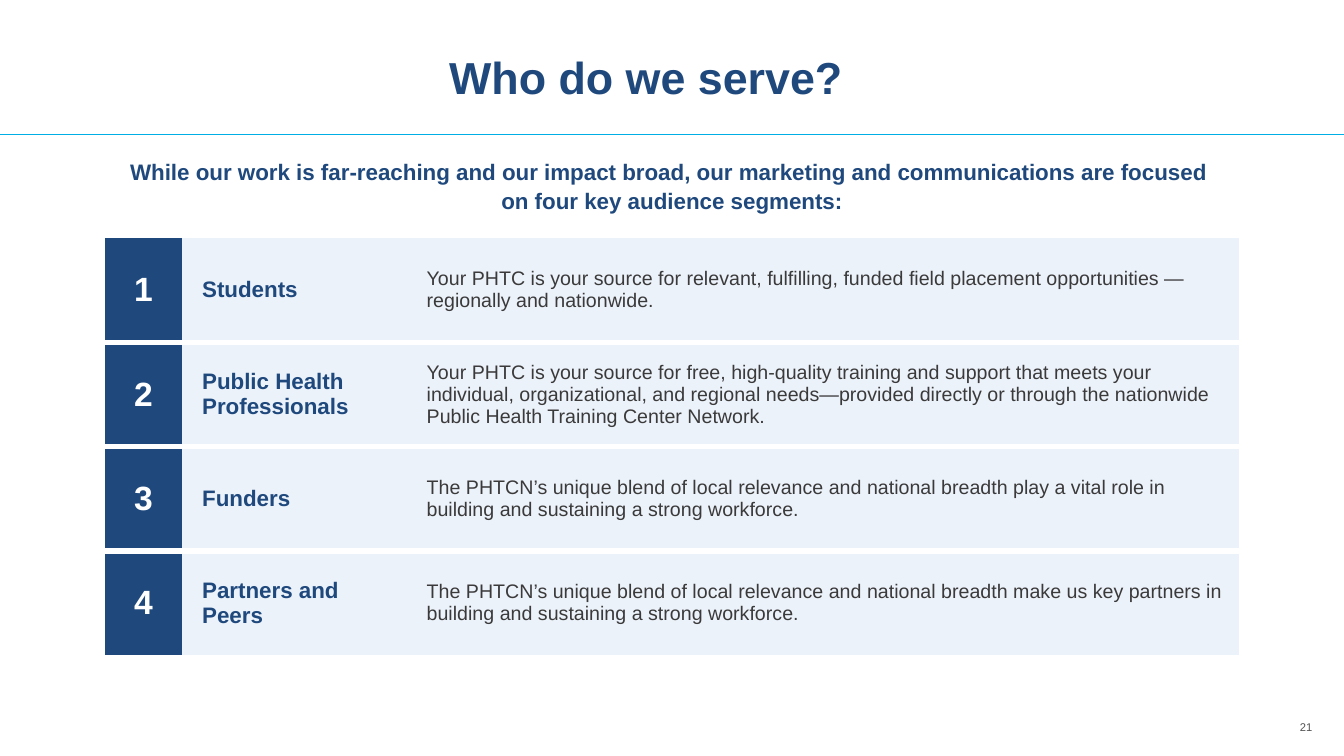
from lxml import etree
from pptx import Presentation
from pptx.dml.color import RGBColor
from pptx.enum.shapes import MSO_CONNECTOR
from pptx.enum.text import MSO_ANCHOR, PP_ALIGN
from pptx.oxml.ns import qn
from pptx.util import Pt

STRAIGHT = MSO_CONNECTOR.STRAIGHT
MIDDLE = MSO_ANCHOR.MIDDLE
LEFT, CENTER = PP_ALIGN.LEFT, PP_ALIGN.CENTER

NAVY = RGBColor(0x1F, 0x49, 0x7D)
CYAN = RGBColor(0x00, 0xAE, 0xE6)
PALE = RGBColor(0xEC, 0xF2, 0xFA)
WHITE = RGBColor(0xFF, 0xFF, 0xFF)
CHARCOAL = RGBColor(0x3B, 0x3A, 0x3B)
GRAY = RGBColor(0x52, 0x52, 0x52)

AUDIENCES = [
    ("Students",
     "Your PHTC is your source for relevant, fulfilling, funded field placement "
     "opportunities —regionally and nationwide."),
    ("Public Health Professionals",
     "Your PHTC is your source for free, high-quality training and support that meets "
     "your individual, organizational, and regional needs—provided directly or through "
     "the nationwide Public Health Training Center Network."),
    ("Funders",
     "The PHTCN’s unique blend of local relevance and national breadth play a vital role "
     "in building and sustaining a strong workforce."),
    ("Partners and Peers",
     "The PHTCN’s unique blend of local relevance and national breadth make us key "
     "partners in building and sustaining a strong workforce."),
]


def write(frame, text, size, color, bold, align):
    """Fill a text frame with one styled paragraph."""
    frame.word_wrap = True
    paragraph = frame.paragraphs[0]
    paragraph.text = text
    paragraph.alignment = align
    font = paragraph.font
    font.name, font.size, font.bold = "Arial", Pt(size), bold
    font.color.rgb = color
    return paragraph


def set_borders(cell, ruled_sides):
    """Draw white rules on the given sides of a cell and none on the others."""
    tc_pr = cell._tc.get_or_add_tcPr()
    for position, side in enumerate("LRTB"):
        border = etree.Element(qn(f"a:ln{side}"))
        if side in ruled_sides:
            border.set("w", str(Pt(4.5)))
            fill = etree.SubElement(border, qn("a:solidFill"))
            etree.SubElement(fill, qn("a:srgbClr"), val=str(WHITE))
        else:
            etree.SubElement(border, qn("a:noFill"))
        tc_pr.insert(position, border)


prs = Presentation()
prs.slide_width, prs.slide_height = Pt(960), Pt(540)
slide = prs.slides.add_slide(prs.slide_layouts[6])

# Rule under the title
title_rule = slide.shapes.add_connector(STRAIGHT, Pt(0), Pt(96), Pt(960), Pt(96))
title_rule.line.color.rgb = CYAN
title_rule.line.width = Pt(1)
etree.SubElement(title_rule._element.spPr, qn("a:effectLst"))

# Title, introduction and page number
texts = [
    ("Who do we serve?", (24, 19, 875, 72), 32, NAVY, True, None),
    ("While our work is far-reaching and our impact broad, our marketing and "
     "communications are focused \von four key audience segments:",
     (36, 111, 888, 42), 16, NAVY, True, 1.1),
    ("21", (918, 509, 30, 20), 8, GRAY, False, None),
]
for text, box, size, color, bold, spacing in texts:
    frame = slide.shapes.add_textbox(*map(Pt, box)).text_frame
    frame.vertical_anchor = MIDDLE
    paragraph = write(frame, text, size, color, bold, CENTER)
    if spacing:
        paragraph.line_spacing = spacing

# Audience table: number, segment, message
audience_table = slide.shapes.add_table(
    len(AUDIENCES), 3, Pt(75), Pt(170), Pt(810), Pt(298)).table
audience_table.first_row = audience_table.horz_banding = False
for column, width in zip(audience_table.columns, (55, 164, 591)):
    column.width = Pt(width)

# Fill, left margin, size, colour, bold and alignment of each column
column_styles = [
    (NAVY, 10.8, 24, WHITE, True, CENTER),
    (PALE, 14.4, 16, NAVY, True, LEFT),
    (PALE, 10.8, 14, CHARCOAL, False, LEFT),
]
last = len(AUDIENCES) - 1
for row, (segment, message) in enumerate(AUDIENCES):
    ruled_sides = ("T" if row > 0 else "") + ("B" if row < last else "")
    for col, text in enumerate((str(row + 1), segment, message)):
        background, left_margin, *text_style = column_styles[col]
        cell = audience_table.cell(row, col)
        cell.fill.solid()
        cell.fill.fore_color.rgb = background
        cell.vertical_anchor = MIDDLE
        cell.margin_left = Pt(left_margin)
        cell.margin_right = cell.margin_top = cell.margin_bottom = Pt(10.8)
        write(cell.text_frame, text, *text_style)
        set_borders(cell, ruled_sides)

prs.save("out.pptx")
